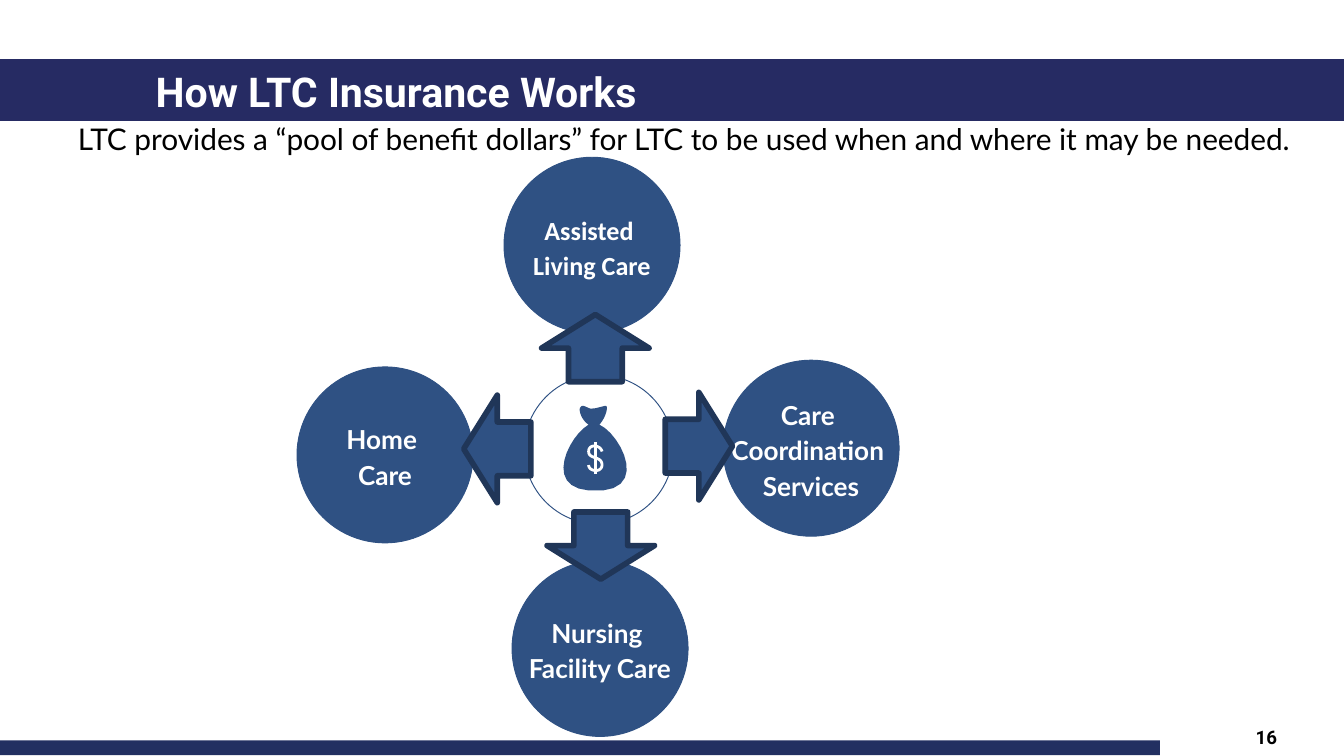
from lxml import etree
from pptx import Presentation
from pptx.dml.color import RGBColor
from pptx.enum.shapes import MSO_SHAPE
from pptx.enum.text import MSO_ANCHOR, PP_ALIGN
from pptx.oxml.ns import qn
from pptx.util import Inches, Pt

RECTANGLE, OVAL, ARROW = MSO_SHAPE.RECTANGLE, MSO_SHAPE.OVAL, MSO_SHAPE.RIGHT_ARROW
LEFT, CENTER, RIGHT = PP_ALIGN.LEFT, PP_ALIGN.CENTER, PP_ALIGN.RIGHT
TOP, MIDDLE, BOTTOM = MSO_ANCHOR.TOP, MSO_ANCHOR.MIDDLE, MSO_ANCHOR.BOTTOM

COLORS = {"footer": "223061", "banner": "262B63", "blue": "2F5183",
          "edge": "203658", "white": "FFFFFF", "black": "000000"}

BARS = [((0, 5.51, 8.63, 0.11), "footer"), ((0, 0.44, 10, 0.46), "banner")]
TITLE = "How LTC Insurance Works"
CAPTION = ("LTC provides a “pool of benefit dollars” for LTC to be used "
           "when and where it may be needed.")
PAGE_NUMBER = "16"

CARE_SIZE = 1.31
CARE_TYPES = [
    (2.21, 2.73, "Lato", [["Home ", "Care"]]),
    (3.75, 1.17, "Calibri", [["Assisted ", "Living Care"]]),
    (3.81, 4.17, "Lato", [["Nursing ", "Facility Care"]]),
    (5.38, 2.68, "Lato", [["Care ", "Coordination "], ["Services"]]),
]
HUB = (3.9, 2.79, 1.11, 1.11)
ARROW_SIZE = (0.5, 0.8)
ARROWS = [(4.95, 2.92, 0), (3.45, 2.94, 180), (4.22, 3.66, 90), (4.18, 2.19, 270)]

BAG_START = (4.46, 3.16)
BAG_CURVES = [
    ((4.5, 3.12), (4.53, 3.03), (4.51, 3.02)),
    ((4.49, 3.02), (4.44, 3.04), (4.41, 3.04)),
    ((4.38, 3.05), (4.34, 3), (4.32, 3.03)),
    ((4.3, 3.05), (4.33, 3.13), (4.38, 3.16)),
    ((4.24, 3.24), (4.04, 3.62), (4.38, 3.65)),
    ((4.86, 3.69), (4.62, 3.23), (4.46, 3.16)),
]
DOLLAR_START = (4.48, 3.36)
DOLLAR_CURVES = [
    ((4.47, 3.31), (4.38, 3.3), (4.38, 3.36)),
    ((4.38, 3.42), (4.48, 3.39), (4.48, 3.46)),
    ((4.48, 3.52), (4.38, 3.51), (4.38, 3.46)),
]
DOLLAR_BAR = [(4.43, 3.29), (4.43, 3.53)]
DOLLAR_WIDTH = 1.5
CURVE_STEPS = 12

presentation = Presentation()
presentation.slide_width, presentation.slide_height = Inches(10), Inches(10 * 9 / 16)
slide = presentation.slides.add_slide(presentation.slide_layouts[6])


def color(name):
    return RGBColor.from_string(COLORS[name])


def style(shape, fill=None, line=None, width=0.5):
    shape.shadow.inherit = False
    if fill:
        shape.fill.solid()
        shape.fill.fore_color.rgb = color(fill)
    else:
        shape.fill.background()
    if line:
        shape.line.color.rgb = color(line)
        shape.line.width = Pt(width)
    else:
        shape.line.fill.background()
    return shape


def add_shape(kind, box, *look):
    return style(slide.shapes.add_shape(kind, *map(Inches, box)), *look)


def write(shape, paragraphs, size, font, ink, bold, align, anchor, margin, wrap=True, spacing=None):
    frame = shape.text_frame
    frame.word_wrap = wrap
    frame.vertical_anchor = anchor
    frame.margin_left = frame.margin_right = Inches(margin[0])
    frame.margin_top = frame.margin_bottom = Inches(margin[1])
    for index, lines in enumerate(paragraphs):
        paragraph = frame.add_paragraph() if index else frame.paragraphs[0]
        paragraph.alignment = align
        paragraph.line_spacing = spacing
        for number, text in enumerate(lines):
            if number:
                paragraph.add_line_break()
            run = paragraph.add_run()
            run.text = text
            run.font.size, run.font.name, run.font.bold = Pt(size), font, bold
            run.font.color.rgb = color(ink)


def add_text(box, text, *look):
    write(slide.shapes.add_textbox(*map(Inches, box)), [[text]], *look)


def trace(start, curves):
    points = [start]
    for first, second, end in curves:
        origin = points[-1]
        for step in range(1, CURVE_STEPS + 1):
            t = step / CURVE_STEPS
            u = 1 - t
            points.append(tuple(
                u**3 * a + 3 * u * u * t * b + 3 * u * t * t * c + t**3 * d
                for a, b, c, d in zip(origin, first, second, end)))
    return points


def add_outline(points, close, *look):
    corners = [(Inches(x), Inches(y)) for x, y in points]
    builder = slide.shapes.build_freeform(*corners[0])
    builder.add_line_segments(corners[1:], close=close)
    style(builder.convert_to_shape(), *look)


for box, fill in BARS:
    add_shape(RECTANGLE, box, fill)
add_text((7.64, 5.35, 1.96, 0.27), PAGE_NUMBER, 10, "Roboto", "black", True, RIGHT, TOP, (0.1, 0.05))
add_text((1.06, 0.22, 6.75, 0.69), TITLE, 22, "Roboto", "white", True, LEFT, BOTTOM, (0.1, 0.05))

for left, top, font, paragraphs in CARE_TYPES:
    circle = add_shape(OVAL, (left, top, CARE_SIZE, CARE_SIZE), "blue", "blue")
    write(circle, paragraphs, 14, font, "white", True, CENTER, MIDDLE, (0.1, 0.1), False, 1.14)

add_shape(OVAL, HUB, None, "blue")
add_outline(trace(BAG_START, BAG_CURVES), True, "blue")
for points in (trace(DOLLAR_START, DOLLAR_CURVES), DOLLAR_BAR):
    add_outline(points, False, None, "white", DOLLAR_WIDTH)

add_text((0.58, 0.9, 9.83, 0.27), CAPTION, 16, "Lato", "black", False, LEFT, TOP, (0, 0))
for left, top, rotation in ARROWS:
    arrow = add_shape(ARROW, (left, top, *ARROW_SIZE), "blue", "edge", 3)
    arrow.rotation = rotation
    etree.SubElement(arrow.element.spPr.find(qn("a:ln")), qn("a:round"))

presentation.save("out.pptx")
